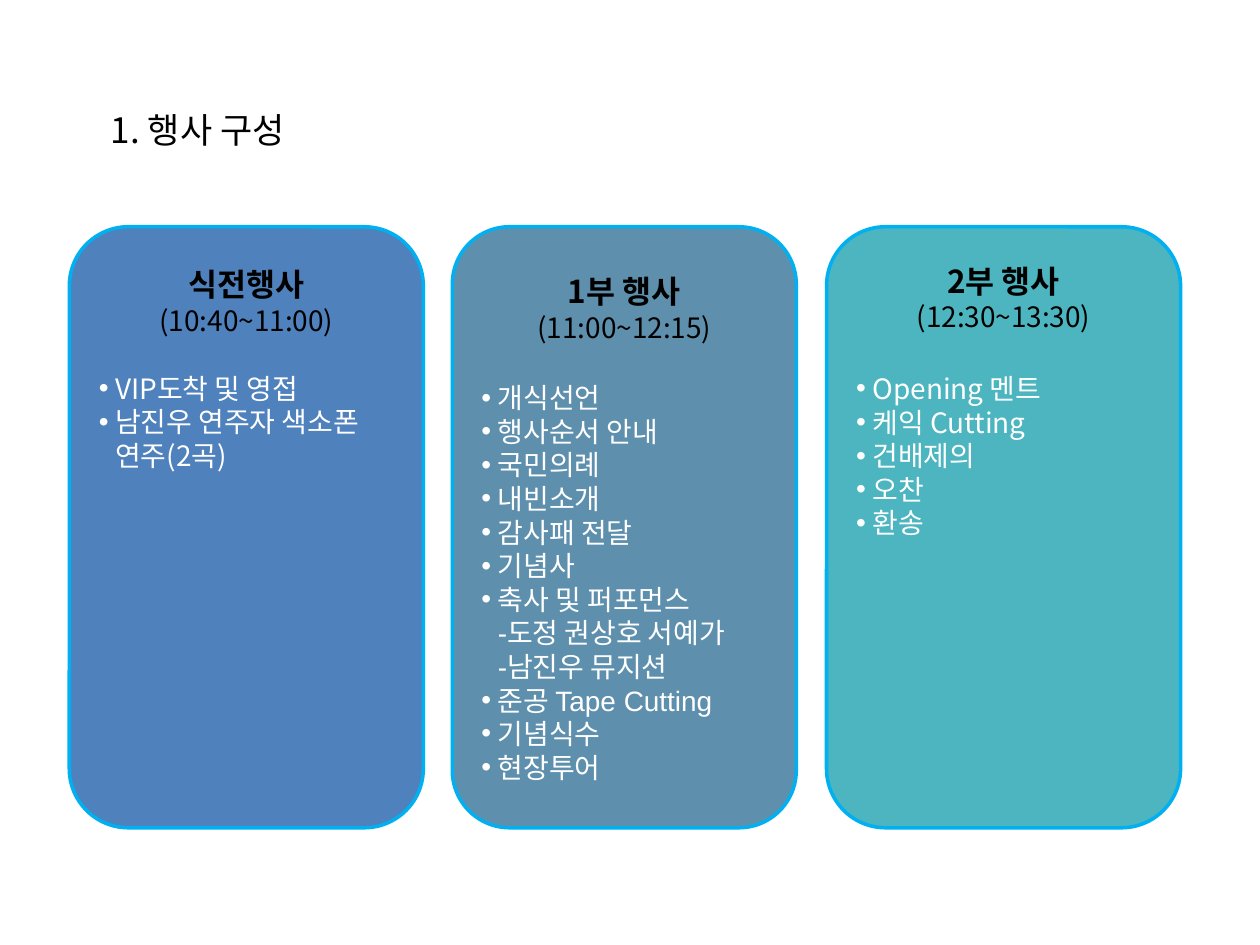
from lxml import etree
from pptx import Presentation, util as u
from pptx.dml.color import RGBColor
from pptx.enum import shapes, text
from pptx.oxml.ns import qn

# Content
TITLE = "1. 행사 구성"
BULLET, PLAIN = "•", ""
CARDS = [
    dict(name="식전행사", time="(10:40~11:00)", fill="blue", left=0.55, width=2.81,
         inset=0.17, gap=19.7, latin="Noto Sans CJK KR",
         items=[(BULLET, "VIP도착 및 영접"), (BULLET, "남진우 연주자 색소폰"),
                (PLAIN, "연주(2곡)")]),
    dict(name="1부 행사", time="(11:00~12:15)", fill="slate", left=3.59, width=2.73,
         inset=0.23, gap=21.1, latin="Arial",
         items=[(BULLET, "개식선언"), (BULLET, "행사순서 안내"), (BULLET, "국민의례"),
                (BULLET, "내빈소개"), (BULLET, "감사패 전달"), (BULLET, "기념사"),
                (BULLET, "축사 및 퍼포먼스"), (PLAIN, "-도정 권상호 서예가"),
                (PLAIN, "-남진우 뮤지션"), (BULLET, "준공 Tape Cutting"),
                (BULLET, "기념식수"), (BULLET, "현장투어")]),
    dict(name="2부 행사", time="(12:30~13:30)", fill="teal", left=6.56, width=2.81,
         inset=0.14, gap=22, latin="Noto Sans CJK KR",
         items=[(BULLET, "Opening 멘트"), (BULLET, "케익 Cutting"), (BULLET, "건배제의"),
                (BULLET, "오찬"), (BULLET, "환송")]),
]

# Style
COLORS = dict(blue="4F81BD", slate="5E90AE", teal="4CB5C0", border="00B0F0",
              black="000000", white="FFFFFF")
FONT = "Noto Sans CJK KR"
CARD_TOP, CARD_HEIGHT = 1.8, 4.77
HANGING = 0.13
LINE_FACTOR = 1.2


def color(name):
    return RGBColor.from_string(COLORS[name])


def add_run(paragraph, words, size, color_name, bold=False, latin=FONT):
    run = paragraph.add_run()
    run.text = words
    font = run.font
    font.size, font.bold, font.name = u.Pt(size), bold, latin
    font.color.rgb = color(color_name)
    east_asian = etree.Element(qn("a:ea"), typeface=FONT)
    run._r.get_or_add_rPr().find(qn("a:latin")).addnext(east_asian)


def add_line(frame, words, size, color_name, align, **style):
    first = frame.paragraphs[0]
    paragraph = frame.add_paragraph() if first.runs else first
    paragraph.alignment = align
    paragraph.line_spacing = u.Pt(size * LINE_FACTOR)
    add_run(paragraph, words, size, color_name, **style)
    return paragraph


def indent(paragraph, bullet):
    properties = paragraph._p.get_or_add_pPr()
    properties.set("marL", str(u.Inches(HANGING)))
    properties.set("indent", str(u.Inches(-HANGING if bullet else 0)))
    if bullet:
        etree.SubElement(properties, qn("a:buFont"), typeface="Arial")
        etree.SubElement(properties, qn("a:buChar"), char=bullet)
    else:
        etree.SubElement(properties, qn("a:buNone"))


def add_card(slide, card):
    shape = slide.shapes.add_shape(
        shapes.MSO_SHAPE.ROUNDED_RECTANGLE, u.Inches(card["left"]), u.Inches(CARD_TOP),
        u.Inches(card["width"]), u.Inches(CARD_HEIGHT))
    shape.shadow.inherit = False
    shape.fill.solid()
    shape.fill.fore_color.rgb = color(card["fill"])
    shape.line.color.rgb = color("border")
    shape.line.width = u.Pt(2)

    frame = shape.text_frame
    frame.word_wrap = True
    frame.vertical_anchor = text.MSO_ANCHOR.TOP
    frame.margin_top = u.Inches(card["inset"])

    # Heading and time
    center, left = text.PP_ALIGN.CENTER, text.PP_ALIGN.LEFT
    add_line(frame, card["name"], 18, "black", center, bold=True)
    add_line(frame, card["time"], 16, "black", center)

    # Programme items
    for index, (bullet, words) in enumerate(card["items"]):
        paragraph = add_line(frame, words, 16, "white", left, latin=card["latin"])
        if index == 0:
            paragraph.space_before = u.Pt(card["gap"])
        indent(paragraph, bullet)


def main():
    presentation = Presentation()
    presentation.slide_width, presentation.slide_height = u.Inches(10), u.Inches(7.5)
    slide = presentation.slides.add_slide(presentation.slide_layouts[5])

    # Title
    title = slide.shapes.title
    title.left, title.top = u.Inches(0.78), u.Inches(0.81)
    title.width, title.height = u.Inches(3.13), u.Inches(0.44)
    frame = title.text_frame
    frame.word_wrap = True
    frame.auto_size = text.MSO_AUTO_SIZE.NONE
    frame.vertical_anchor = text.MSO_ANCHOR.MIDDLE
    frame.paragraphs[0].alignment = text.PP_ALIGN.LEFT
    add_run(frame.paragraphs[0], TITLE, 20, "black")

    # Programme cards
    for card in CARDS:
        add_card(slide, card)

    presentation.save("out.pptx")


if __name__ == "__main__":
    main()
